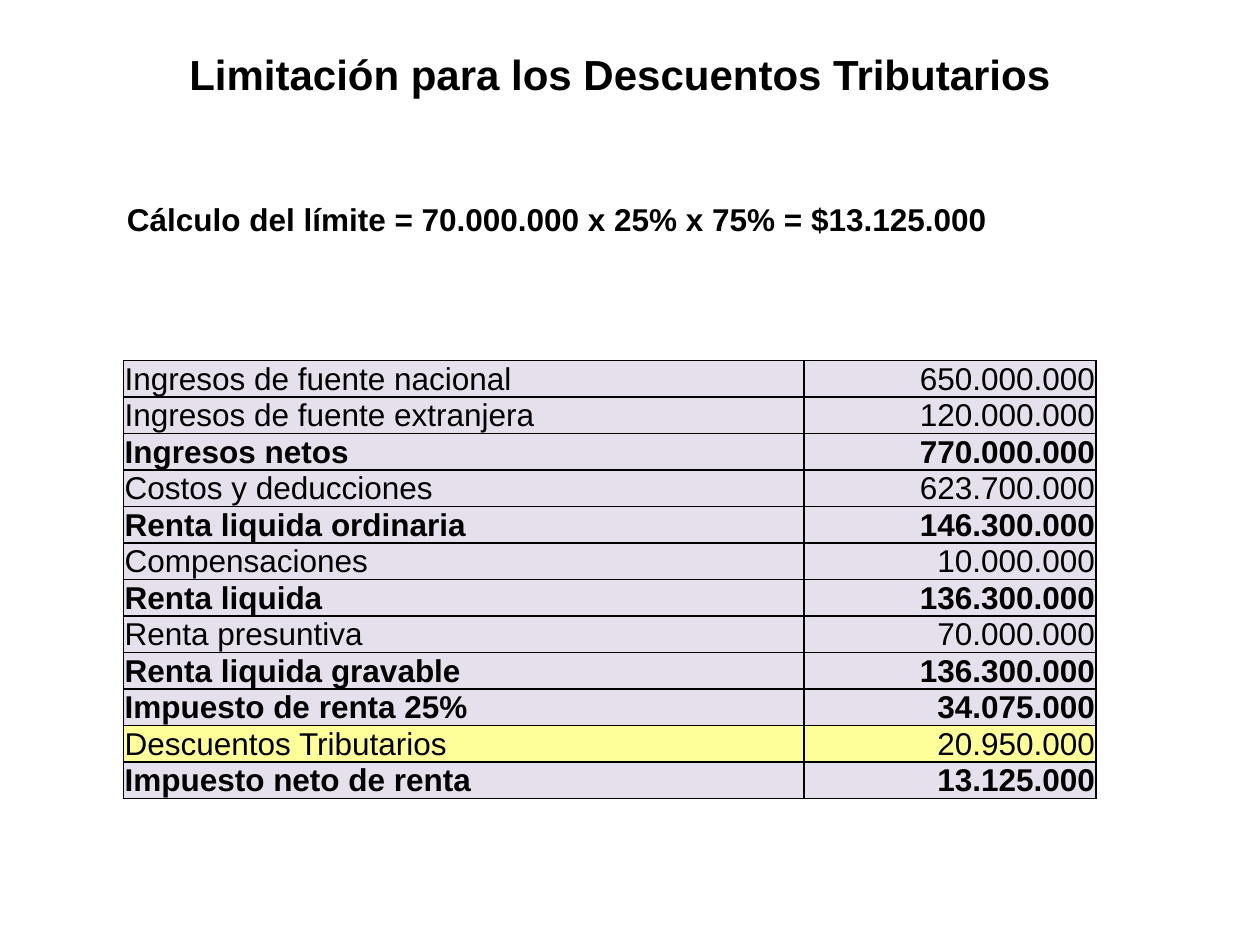
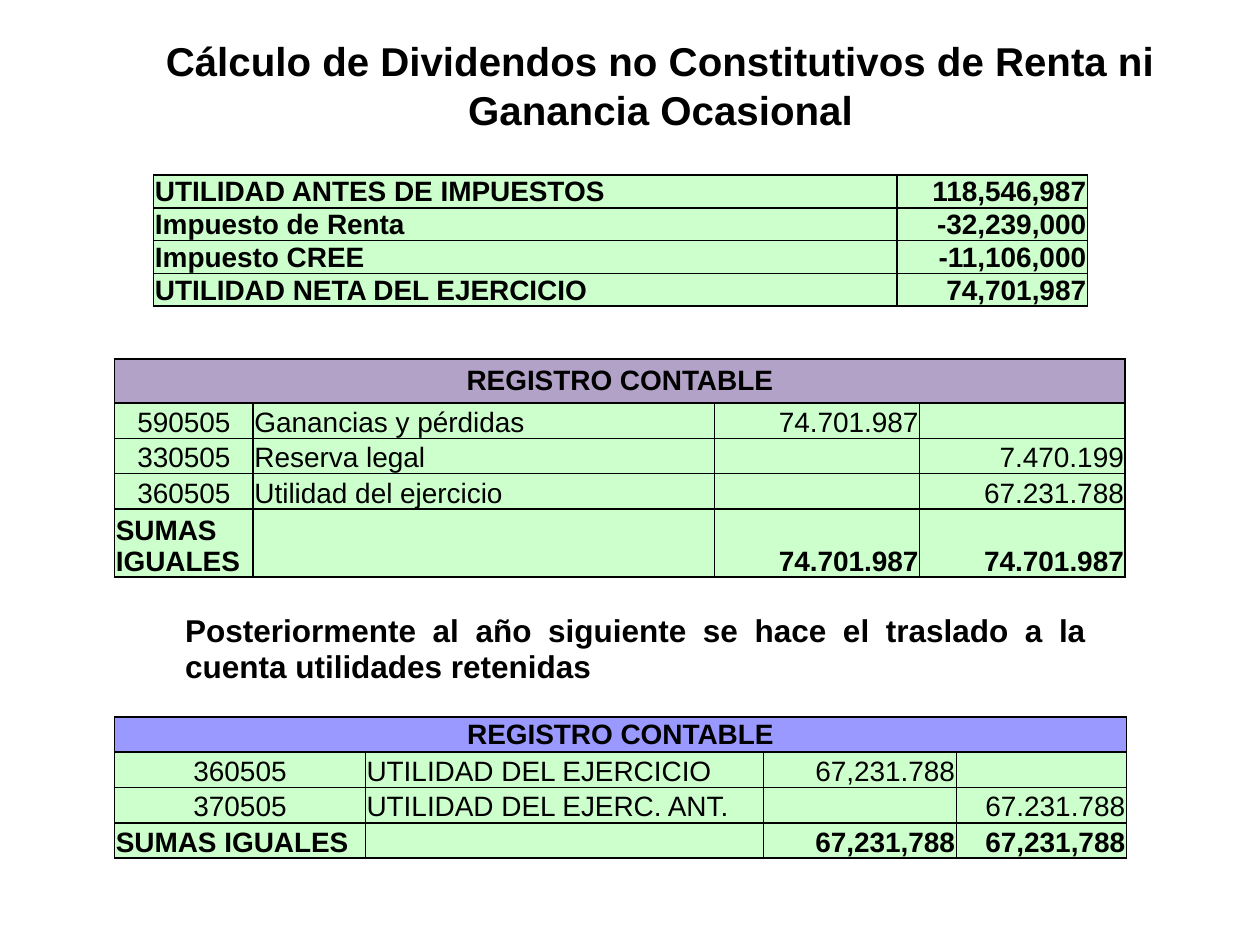
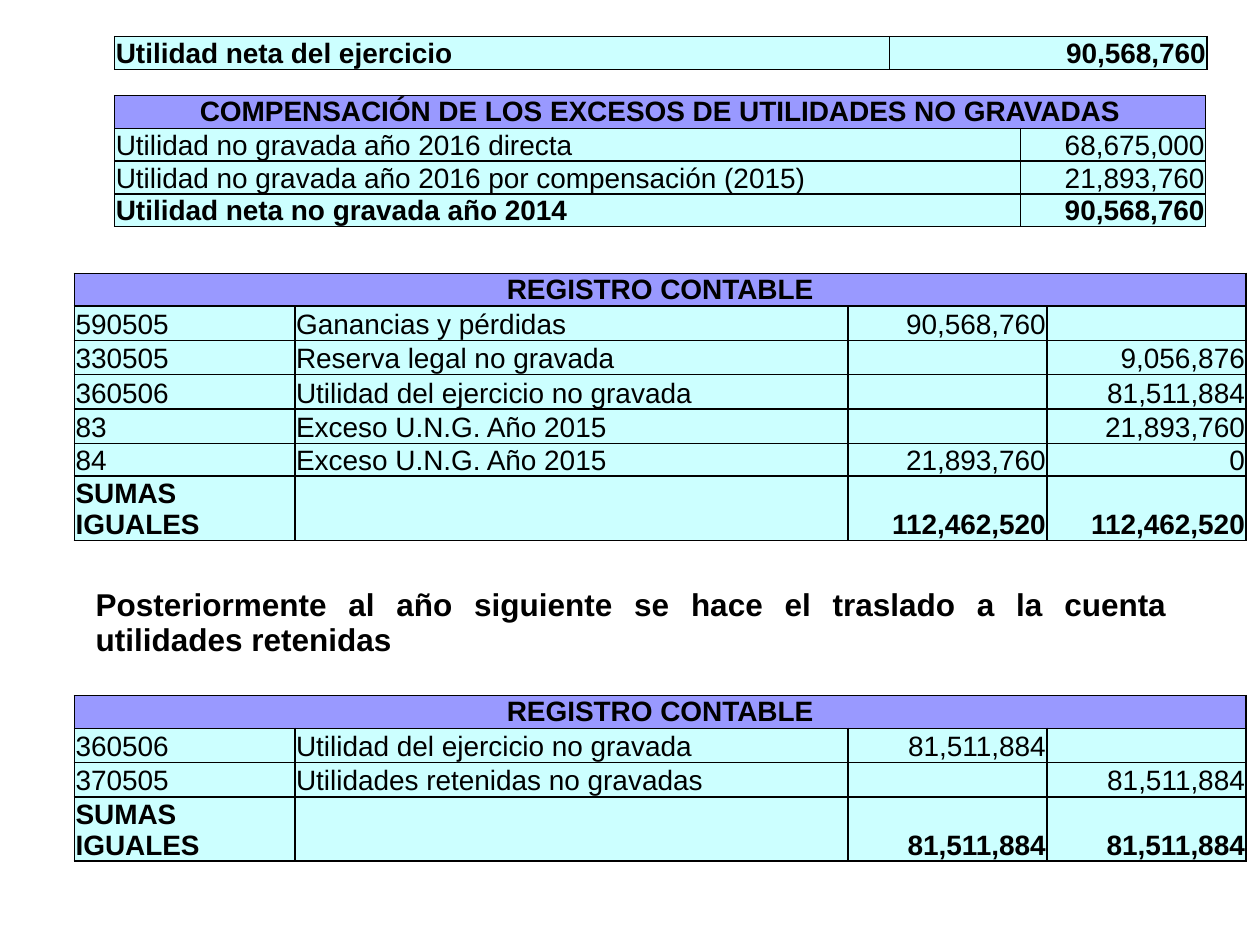
from pptx import Presentation
from pptx.dml.color import RGBColor
from pptx.enum.shapes import MSO_SHAPE
from pptx.enum.text import MSO_ANCHOR as ANCHOR, MSO_AUTO_SIZE as FIT, PP_ALIGN as AL
from pptx.oxml import parse_xml
from pptx.oxml.ns import nsdecls
from pptx.util import Inches, Pt

FONT = "Arial"
BLACK, WHITE = "000000", "FFFFFF"
LILAC, YELLOW, GREEN, CYAN = "E6E0EC", "FFFF99", "CCFFCC", "CCFFFF"
PURPLE, BLUE = "B3A2C7", "9999FF"
ALIGN = {"l": AL.LEFT, "c": AL.CENTER, "r": AL.RIGHT, "j": AL.JUSTIFY}
ROW = 0.26
TWO_LINES = 0.51
LEDGER = "REGISTRO CONTABLE"
TOTALS = "SUMAS IGUALES"
NOTE = ("Posteriormente al año siguiente se hace el traslado "
        "a la cuenta utilidades retenidas")


def rgb(value):
    """Turn a hex string into a colour."""
    return RGBColor.from_string(value)


def write(tf, text, size, bold=True, align="l"):
    """Write one styled run in the first paragraph of a text frame."""
    p = tf.paragraphs[0]
    p.alignment = ALIGN[align]
    if not text:
        p._p.get_or_add_endParaRPr().set("sz", str(size * 100))
        return
    r = p.add_run()
    r.text = text
    r.font.name, r.font.size, r.font.bold = FONT, Pt(size), bold
    r.font.color.rgb = rgb(BLACK)


def add_title(slide, text, box, size, anchor):
    """Place and format the title placeholder."""
    sp = slide.shapes.title
    sp.left, sp.top, sp.width, sp.height = map(Inches, box)
    tf = sp.text_frame
    tf.word_wrap, tf.auto_size, tf.vertical_anchor = True, FIT.NONE, anchor
    write(tf, text, size, align="c")


def add_formula(slide, text, box):
    """Add the white box with the formula."""
    sp = slide.shapes.add_shape(MSO_SHAPE.RECTANGLE, *map(Inches, box))
    sp.shadow.inherit = False
    sp.fill.solid()
    sp.fill.fore_color.rgb = rgb(WHITE)
    sp.line.fill.background()
    sp.text_frame.word_wrap = True
    sp.text_frame.vertical_anchor = ANCHOR.MIDDLE
    write(sp.text_frame, text, 18)


def style_cell(cell, fill, border, anchor=ANCHOR.BOTTOM):
    """Set the margins, borders and fill of a cell."""
    cell.margin_left = cell.margin_right = Inches(0.01)
    cell.margin_top = cell.margin_bottom = 0
    cell.vertical_anchor = anchor
    for side in ("lnL", "lnR", "lnT", "lnB"):
        cell._tc.get_or_add_tcPr().append(parse_xml(
            f'<a:{side} {nsdecls("a")} w="12700"><a:solidFill>'
            f'<a:srgbClr val="{border}"/></a:solidFill></a:{side}>'))
    if fill:
        cell.fill.solid()
        cell.fill.fore_color.rgb = rgb(fill)
    else:
        cell.fill.background()


def new_table(slide, left, top, widths, heights):
    """Add a plain table with the given column widths and row heights."""
    frame = slide.shapes.add_table(
        len(heights), len(widths), Inches(left), Inches(top),
        Inches(sum(widths)), Inches(sum(heights)))
    table = frame.table
    table.first_row = table.horz_banding = False
    for col, width in zip(table.columns, widths):
        col.width = Inches(width)
    for row, height in zip(table.rows, heights):
        row.height = Inches(height)
    return table


def add_figures(slide, left, top, widths, rows, fill, aligns="lr", bold=(), size=16,
                row_height=ROW, last_height=None, header=None, header_fill=BLUE,
                header_height=None, marked=None):
    """Add a table of figures, with an optional header across all columns."""
    heights = [row_height] * len(rows)
    heights[-1] = last_height or row_height
    if header:
        heights.insert(0, header_height or row_height)
    table = new_table(slide, left, top, widths, heights)
    first = 0
    if header:
        first = 1
        for col in range(len(widths)):
            style_cell(table.cell(0, col), header_fill, BLACK, ANCHOR.MIDDLE)
        table.cell(0, 0).merge(table.cell(0, len(widths) - 1))
        write(table.cell(0, 0).text_frame, header, size, align="c")
    for i, row in enumerate(rows):
        for j, (text, align) in enumerate(zip(row, aligns)):
            cell = table.cell(i + first, j)
            style_cell(cell, YELLOW if i == marked else fill, BLACK)
            if row[0] == TOTALS and align == "c":
                align = "l"
            write(cell.text_frame, text, size, i in bold, align)


def add_ledger(slide, left, top, widths, rows, fill, aligns, **options):
    """Add an accounting entry whose last row holds the totals."""
    add_figures(slide, left, top, widths, rows, fill, aligns,
                bold=(len(rows) - 1,), header=LEDGER, **options)


def add_note(slide, left, top, width):
    """Add the justified note between two entries."""
    cell = new_table(slide, left, top, [width], [0.61]).cell(0, 0)
    style_cell(cell, None, WHITE, ANCHOR.MIDDLE)
    write(cell.text_frame, NOTE, 18, align="j")


def limit_slide(prs):
    """Build the slide on the limit for tax discounts."""
    s = prs.slides.add_slide(prs.slide_layouts[5])
    add_title(s, "Limitación para los Descuentos Tributarios",
              (1.3, 0.17, 7.24, 0.83), 24, ANCHOR.MIDDLE)
    add_formula(s, "Cálculo del límite = 70.000.000 x 25% x 75% = $13.125.000",
                (0.91, 1.54, 7.2, 0.4))
    rows = [
        ("Ingresos de fuente nacional", "650.000.000"),
        ("Ingresos de fuente extranjera", "120.000.000"),
        ("Ingresos netos", "770.000.000"),
        ("Costos y deducciones", "623.700.000"),
        ("Renta liquida ordinaria", "146.300.000"),
        ("Compensaciones", "10.000.000"),
        ("Renta liquida", "136.300.000"),
        ("Renta presuntiva", "70.000.000"),
        ("Renta liquida gravable", "136.300.000"),
        ("Impuesto de renta 25%", "34.075.000"),
        ("Descuentos Tributarios", "20.950.000"),
        ("Impuesto neto de renta", "13.125.000"),
    ]
    add_figures(s, 0.98, 2.86, (5.4, 2.32), rows, LILAC, size=18, row_height=0.29,
                bold=(2, 4, 6, 8, 9, 11), marked=10)


def dividends_slide(prs):
    """Build the slide on untaxed dividends."""
    s = prs.slides.add_slide(prs.slide_layouts[5])
    add_title(s, "Cálculo de Dividendos no Constitutivos de Renta ni Ganancia Ocasional",
              (1.14, 0.24, 8.21, 0.88), 23, ANCHOR.TOP)
    profit = [
        ("UTILIDAD ANTES DE IMPUESTOS", "118,546,987"),
        ("Impuesto de Renta", "-32,239,000"),
        ("Impuesto CREE", "-11,106,000"),
        ("UTILIDAD NETA DEL EJERCICIO", "74,701,987"),
    ]
    add_figures(s, 1.22, 1.39, (5.9, 1.51), profit, GREEN, bold=range(4))
    closing = [
        ("590505", "Ganancias y pérdidas", "74.701.987", ""),
        ("330505", "Reserva legal", "", "7.470.199"),
        ("360505", "Utilidad del ejercicio", "", "67.231.788"),
        (TOTALS, "", "74.701.987", "74.701.987"),
    ]
    add_ledger(s, 0.91, 2.85, (1.1, 3.66, 1.63, 1.63), closing, GREEN, "clrr",
               row_height=0.28, last_height=0.54, header_fill=PURPLE,
               header_height=0.35)
    add_note(s, 1.46, 4.85, 7.17)
    transfer = [
        ("360505", "UTILIDAD DEL EJERCICIO", "67,231.788", ""),
        ("370505", "UTILIDAD DEL EJERC. ANT.", "", "67.231.788"),
        (TOTALS, "", "67,231,788", "67,231,788"),
    ]
    add_ledger(s, 0.91, 5.69, (1.99, 3.16, 1.53, 1.35), transfer, GREEN, "clrr",
               row_height=0.28)


def compensation_slide(prs):
    """Build the slide on the compensation of untaxed profits."""
    s = prs.slides.add_slide(prs.slide_layouts[6])
    add_figures(s, 0.91, 0.29, (6.15, 2.52),
                [("Utilidad neta del ejercicio", "90,568,760")], CYAN, bold=(0,))
    untaxed = [
        ("Utilidad no gravada año 2016 directa", "68,675,000"),
        ("Utilidad no gravada año 2016 por compensación (2015)", "21,893,760"),
        ("Utilidad neta no gravada año 2014", "90,568,760"),
    ]
    add_figures(s, 0.91, 0.76, (7.19, 1.47), untaxed, CYAN, bold=(2,),
                header="COMPENSACIÓN DE LOS EXCESOS DE UTILIDADES NO GRAVADAS")
    closing = [
        ("590505", "Ganancias y pérdidas", "90,568,760", ""),
        ("330505", "Reserva legal no gravada", "", "9,056,876"),
        ("360506", "Utilidad del ejercicio no gravada", "", "81,511,884"),
        ("83", "Exceso U.N.G. Año 2015", "", "21,893,760"),
        ("84", "Exceso U.N.G. Año 2015", "21,893,760", "0"),
        (TOTALS, "", "112,462,520", "112,462,520"),
    ]
    transfer = [
        ("360506", "Utilidad del ejercicio no gravada", "81,511,884", ""),
        ("370505", "Utilidades retenidas no gravadas", "", "81,511,884"),
        (TOTALS, "", "81,511,884", "81,511,884"),
    ]
    for top, rows in ((2.17, closing), (5.52, transfer)):
        add_ledger(s, 0.59, top, (1.75, 4.39, 1.58, 1.58), rows, CYAN, "llrr",
                   last_height=TWO_LINES)
    add_note(s, 0.75, 4.64, 8.52)


def main():
    """Build and save the presentation."""
    prs = Presentation()
    prs.slide_width, prs.slide_height = Inches(10), Inches(7.5)
    limit_slide(prs)
    dividends_slide(prs)
    compensation_slide(prs)
    prs.save("out.pptx")


if __name__ == "__main__":
    main()
